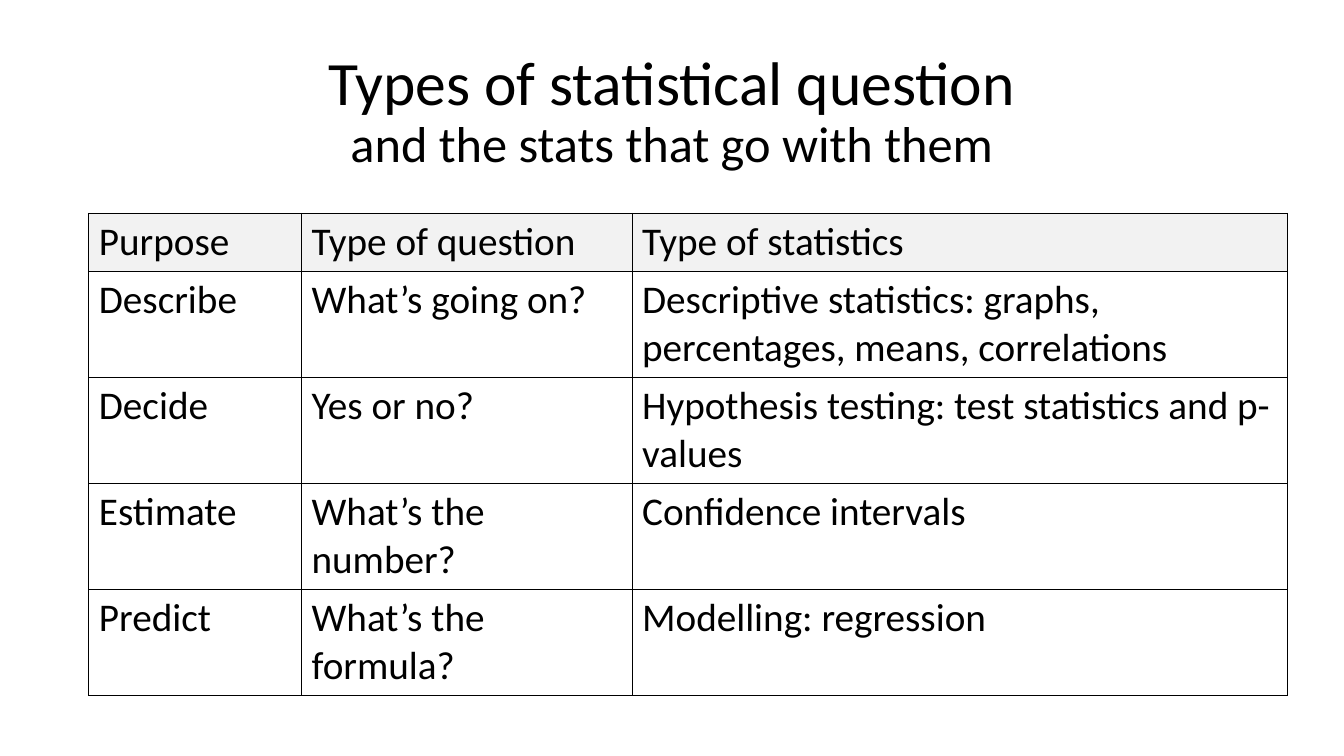
import pptx
import pptx.dml.color
import pptx.enum.text
import pptx.oxml
import pptx.oxml.ns
import pptx.util
from pptx.util import Cm

BLACK = pptx.dml.color.RGBColor(0x00, 0x00, 0x00)
HEADER_GREY = pptx.dml.color.RGBColor(0xF2, 0xF2, 0xF2)
BORDER_XML = (
    '<a:{side} %s w="12700"><a:solidFill><a:srgbClr val="{color}"/></a:solidFill>'
    '<a:prstDash val="solid"/></a:{side}>' % pptx.oxml.ns.nsdecls("a")
)

TITLE_LINES = [
    ("Types of statistical question", 44),
    ("and the stats that go with them", 36),
]
ROWS = [
    ("Purpose", "Type of question", "Type of statistics"),
    ("Describe", "What’s going on?",
     "Descriptive statistics: graphs, percentages, means, correlations"),
    ("Decide", "Yes or no?", "Hypothesis testing: test statistics and p-values"),
    ("Estimate", "What’s the number?", "Confidence intervals"),
    ("Predict", "What’s the formula?", "Modelling: regression"),
]
COL_WIDTHS = [5.36, 8.33, 16.51]
ROW_HEIGHTS = [1.46] + [2.67] * 4


def add_run(p, text, size):
    r = p.add_run()
    r.text = text
    font_format = {"name": "Calibri", "size": pptx.util.Pt(size)}
    for name, value in font_format.items():
        setattr(r.font, name, value)
    r.font.color.rgb = BLACK


prs = pptx.Presentation()
prs.slide_width = Cm(33.87)
prs.slide_height = Cm(19.05)
s = prs.slides.add_slide(prs.slide_layouts[6])

sp = s.shapes.add_textbox(Cm(2.33), Cm(1.01), Cm(29.21), Cm(3.68))
tf = sp.text_frame
frame_format = {
    "word_wrap": True,
    "vertical_anchor": pptx.enum.text.MSO_ANCHOR.MIDDLE,
}
for name, value in frame_format.items():
    setattr(tf, name, value)
p = tf.paragraphs[0]
paragraph_format = {
    "alignment": pptx.enum.text.PP_ALIGN.CENTER,
    "line_spacing": 0.9,
}
for name, value in paragraph_format.items():
    setattr(p, name, value)
for i, (text, size) in enumerate(TITLE_LINES):
    if i:
        p.add_line_break()
    add_run(p, text, size)

table = s.shapes.add_table(
    len(ROWS), len(COL_WIDTHS), Cm(2.24), Cm(5.38),
    Cm(sum(COL_WIDTHS)), Cm(sum(ROW_HEIGHTS)),
).table
table.horz_banding = False
for column, width in zip(table.columns, COL_WIDTHS):
    column.width = Cm(width)
for row, height in zip(table.rows, ROW_HEIGHTS):
    row.height = Cm(height)

for i, texts in enumerate(ROWS):
    for j, text in enumerate(texts):
        cell = table.cell(i, j)
        p = cell.text_frame.paragraphs[0]
        add_run(p, text, 28)
        p.runs[0].font.bold = False
        tc_pr = cell._tc.get_or_add_tcPr()
        for side in ("lnL", "lnR", "lnT", "lnB"):
            tc_pr.append(pptx.oxml.parse_xml(BORDER_XML.format(side=side, color=BLACK)))
        if i == 0:
            cell.fill.solid()
            cell.fill.fore_color.rgb = HEADER_GREY
        else:
            cell.fill.background()

prs.save("out.pptx")
